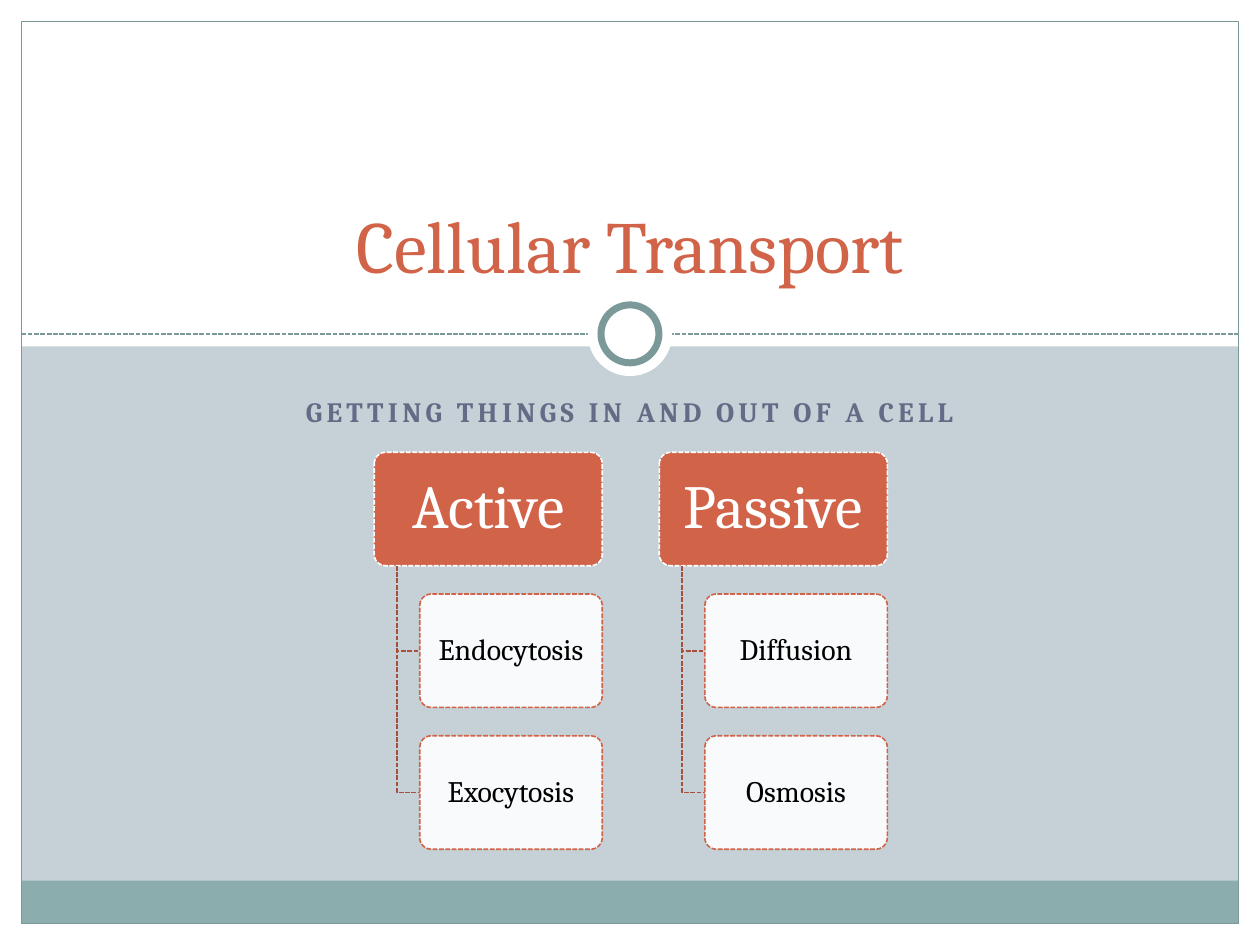
from lxml.etree import SubElement
from pptx import Presentation
from pptx.dml.color import RGBColor
from pptx.enum.dml import MSO_LINE
from pptx.enum.shapes import MSO_CONNECTOR, MSO_SHAPE
from pptx.enum.text import MSO_ANCHOR, MSO_AUTO_SIZE, PP_ALIGN
from pptx.oxml.ns import qn
from pptx.util import Inches, Pt

WHITE, TEAL, RUST, BROWN = "FFFFFF", "7C999A", "D16349", "A74F3A"


def paint(item, fill=None, line=None, width=0.9, dash=None, alpha=None):
    """Colour a shape, connector, font or background from hex strings."""
    if hasattr(item, "fill"):
        if fill:
            item.fill.solid()
            item.fill.fore_color.rgb = RGBColor.from_string(fill)
        else:
            item.fill.background()
    if alpha:
        color = item.element.spPr.find(".//" + qn("a:srgbClr"))
        SubElement(color, qn("a:alpha")).set("val", str(alpha * 1000))
    if hasattr(item, "line"):
        if line:
            item.line.fill.solid()
            item.line.fill.fore_color.rgb = RGBColor.from_string(line)
            item.line.width = Pt(width)
            item.line.dash_style = dash
        else:
            item.line.fill.background()
        if hasattr(item, "shadow"):
            item.shadow.inherit = False
        else:
            SubElement(item.element.spPr, qn("a:effectLst"))


def write(sp, text, size, color, anchor=MSO_ANCHOR.MIDDLE, bold=False,
          tracking=0, spacing=1.0, inset=(0.1, 0.05)):
    tf = sp.text_frame
    tf.word_wrap = True
    tf.auto_size = MSO_AUTO_SIZE.NONE
    tf.vertical_anchor = anchor
    tf.margin_left = tf.margin_right = Inches(inset[0])
    tf.margin_top = tf.margin_bottom = Inches(inset[1])
    p = tf.paragraphs[0]
    p.alignment = PP_ALIGN.CENTER
    p.line_spacing = spacing
    r = p.add_run()
    r.text = text
    r.font.name = "Cambria"
    r.font.size = Pt(size)
    r.font.bold = bold
    paint(r.font, color)
    if tracking:
        r.font._element.set("spc", str(int(tracking * 100)))


prs = Presentation()
prs.slide_width, prs.slide_height = Inches(10), Inches(7.5)
s = prs.slides.add_slide(prs.slide_layouts[5])
paint(s.background, "C5D1D7")

# Frame: white margins, footer band, dashed rule, border and ring
EDGE = 0.17
for x, y, w, h, fill in [
    (0, 7.5 - EDGE, 10, EDGE, WHITE),
    (10 - EDGE, 0, EDGE, 7.5, WHITE),
    (0, 0, EDGE, 7.5, WHITE),
    (0, 0, 10, 2.75, WHITE),
    (EDGE, 6.99, 10 - 2 * EDGE, 0.34, "8CADAE"),
]:
    band = s.shapes.add_shape(MSO_SHAPE.RECTANGLE, Inches(x), Inches(y), Inches(w), Inches(h))
    paint(band, fill)

RULE_Y = 2.65
rule = s.shapes.add_connector(MSO_CONNECTOR.STRAIGHT, Inches(EDGE), Inches(RULE_Y),
                              Inches(10 - EDGE), Inches(RULE_Y))
paint(rule, line=TEAL, dash=MSO_LINE.SQUARE_DOT)
border = s.shapes.add_shape(MSO_SHAPE.RECTANGLE, Inches(EDGE), Inches(EDGE),
                            Inches(10 - 2 * EDGE), Inches(7.5 - 2 * EDGE))
paint(border, line=TEAL, width=0.75)
for size, line in [(0.67, None), (0.46, TEAL)]:
    ring = s.shapes.add_shape(MSO_SHAPE.OVAL, Inches(5 - size / 2), Inches(RULE_Y - size / 2),
                              Inches(size), Inches(size))
    paint(ring, WHITE, line, width=4)

# Subtitle and title, the title brought in front of the frame
subtitle = s.shapes.add_textbox(Inches(1.5), Inches(3.08), Inches(7), Inches(0.45))
write(subtitle, "GETTING THINGS IN AND OUT OF A CELL", 16, "646B86",
      anchor=MSO_ANCHOR.TOP, bold=True, tracking=2.5)
title = s.shapes.title
title.left, title.top, title.width, title.height = map(Inches, (0.75, 0.42, 8.5, 1.92))
write(title, "Cellular Transport", 42, RUST, anchor=MSO_ANCHOR.BOTTOM)
s.shapes.element.append(title.element)

# Two hierarchies: a head card with its children indented below it
CARD_W, CARD_H = 1.81, 0.9
COL, ROW = CARD_W * 1.25, CARD_H * 1.25
LEFT, TOP = 2.97, 3.59
TREES = [("Active", ["Endocytosis", "Exocytosis"]), ("Passive", ["Diffusion", "Osmosis"])]
for col, (head, children) in enumerate(TREES):
    x = LEFT + col * COL
    trunk_x, child_x = x + CARD_W * 0.1, x + CARD_W * 0.2
    for row, text in enumerate([head] + children):
        y = TOP + row * ROW
        card_x = child_x if row else x
        if row:
            mid_y = y + CARD_H / 2
            branch = s.shapes.build_freeform(Inches(trunk_x), Inches(TOP + CARD_H))
            branch.add_line_segments([(Inches(trunk_x), Inches(mid_y)),
                                      (Inches(child_x), Inches(mid_y))], close=False)
            paint(branch.convert_to_shape(), line=BROWN, dash=MSO_LINE.SQUARE_DOT)
        card = s.shapes.add_shape(MSO_SHAPE.ROUNDED_RECTANGLE, Inches(card_x), Inches(y),
                                  Inches(x + CARD_W - card_x), Inches(CARD_H))
        card.adjustments[0] = 0.1
        if row:
            paint(card, WHITE, RUST, dash=MSO_LINE.SQUARE_DOT, alpha=90)
            write(card, text, 17, "000000", spacing=0.9, inset=(0.06, 0.04))
        else:
            paint(card, RUST, WHITE, dash=MSO_LINE.SQUARE_DOT)
            write(card, text, 35, WHITE, spacing=0.9, inset=(0.09, 0.07))

prs.save("out.pptx")
